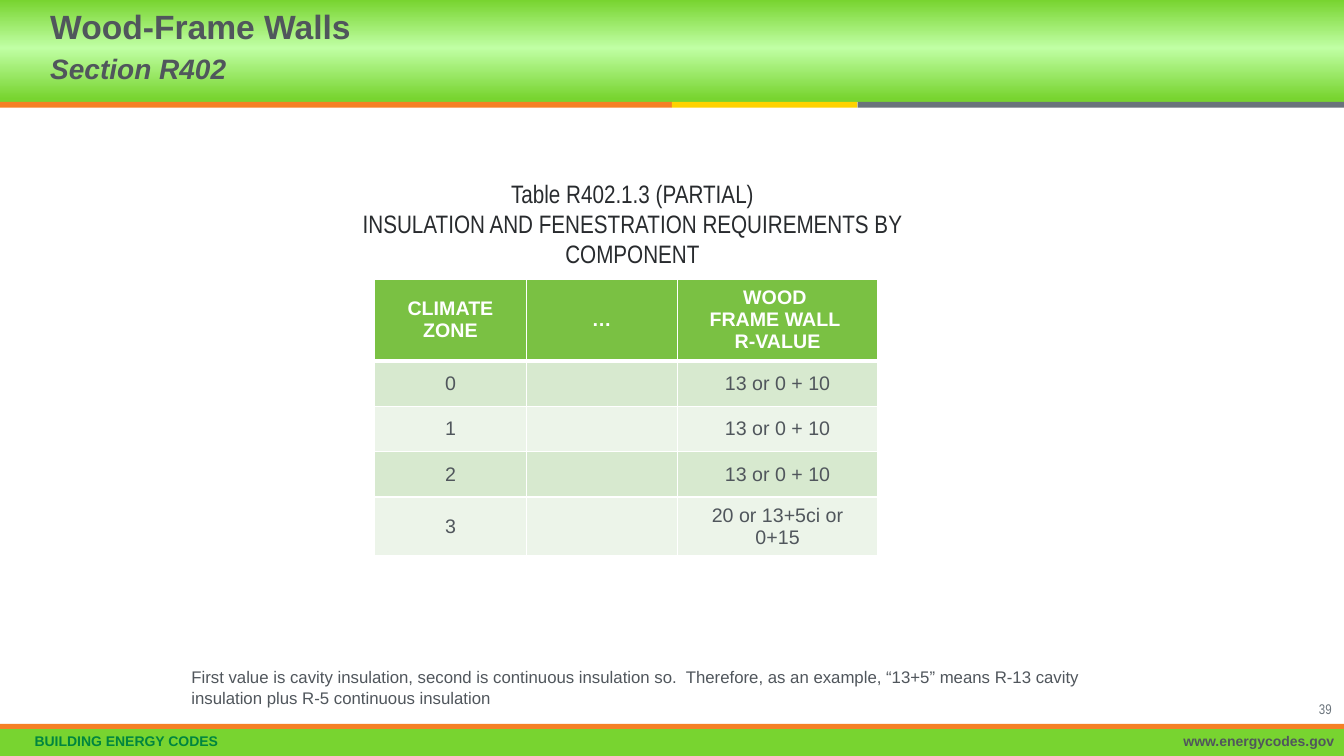
"""Builds the Wood-Frame Walls slide with its R-value table."""
from copy import deepcopy

from lxml import etree
from pptx import Presentation
from pptx.dml.color import RGBColor
from pptx.enum.shapes import MSO_SHAPE
from pptx.enum.text import MSO_ANCHOR, PP_ALIGN
from pptx.oxml.ns import qn
from pptx.util import Pt

RECT = MSO_SHAPE.RECTANGLE
LEFT, CENTER, RIGHT = PP_ALIGN.LEFT, PP_ALIGN.CENTER, PP_ALIGN.RIGHT
TOP, MIDDLE = MSO_ANCHOR.TOP, MSO_ANCHOR.MIDDLE

WHITE = RGBColor(0xFF, 0xFF, 0xFF)
LIME = RGBColor(0x78, 0xD4, 0x30)
PALE_LIME = RGBColor(0xC0, 0xFF, 0xA4)
ORANGE = RGBColor(0xF5, 0x80, 0x25)
YELLOW = RGBColor(0xFF, 0xD2, 0x00)
GRAY = RGBColor(0x6A, 0x73, 0x7B)
SLATE = RGBColor(0x50, 0x56, 0x5C)
INK = RGBColor(0x28, 0x2B, 0x2E)
GREEN = RGBColor(0x00, 0x85, 0x3F)
HEADER_GREEN = RGBColor(0x7A, 0xC1, 0x43)
BAND_DARK = RGBColor(0xD7, 0xE9, 0xCF)
BAND_LIGHT = RGBColor(0xEC, 0xF4, 0xE9)


def add_bar(x, y, w, h, color):
    """Add a borderless filled rectangle."""
    s = shapes.add_shape(RECT, Pt(x), Pt(y), Pt(w), Pt(h))
    s.shadow.inherit = False
    s.line.fill.background()
    s.fill.solid()
    s.fill.fore_color.rgb = color
    return s


def write(tf, text, align, color, formats, spacing=None):
    """Write one paragraph, giving its runs and line breaks the same format."""
    p = tf.paragraphs[0]
    p.text = text
    p.alignment = align
    if spacing:
        p.line_spacing = spacing
    for r in p.runs:
        r.font.color.rgb = color
        for name, value in formats.items():
            setattr(r.font, name, value)
    for br in p._p.findall(qn("a:br")):
        br.append(deepcopy(p.runs[0]._r.rPr))
    return p


prs = Presentation()
prs.slide_width, prs.slide_height = Pt(960), Pt(540)
shapes = prs.slides.add_slide(prs.slide_layouts[6]).shapes

banner = add_bar(-3, 0, 963, 72.7, LIME)
banner.fill.gradient()
banner.fill.gradient_angle = 270
gs_list = banner.fill._fill._gradFill.gsLst
gs_list.append(deepcopy(gs_list[0]))
for stop, (position, color) in zip(
        banner.fill.gradient_stops, [(0, LIME), (0.47, PALE_LIME), (0.97, LIME)]):
    stop.color.rgb = color
    stop.position = position

for x, y, w, h, color in [
    (0, 520.5, 960, 19.5, LIME),
    (0, 72.7, 480, 4.3, ORANGE),
    (480, 72.7, 132.5, 4.3, YELLOW),
    (612.5, 72.7, 347.5, 4.3, GRAY),
    (0, 517, 960, 3.6, ORANGE),
]:
    add_bar(x, y, w, h, color)

ARIAL_10 = {"name": "Arial", "size": Pt(10), "bold": True}
NARROW_10 = {"name": "Arial Narrow", "size": Pt(10)}
ARIAL_12 = {"name": "Arial", "size": Pt(12)}
NARROW_18 = {"name": "Arial Narrow", "size": Pt(18)}
TITLE = {"name": "Arial", "size": Pt(24), "bold": True}
SUBTITLE = {"size": Pt(20), "italic": True}

NOTE = ("First value is cavity insulation, second is continuous insulation so.  "
        "Therefore, as an example, “13+5” means R-13 cavity insulation "
        "plus R-5 continuous insulation")
CAPTION = ("Table R402.1.3 (PARTIAL)\v"
           "INSULATION AND FENESTRATION REQUIREMENTS BY COMPONENT")

for x, y, w, h, text, align, anchor, color, formats, spacing in [
    (17.6, 521.3, 400, 18.7, "BUILDING ENERGY CODES", LEFT, TOP, GREEN, ARIAL_10, 0.9),
    (575, 521.3, 385, 18.7, "www.energycodes.gov", RIGHT, TOP, SLATE, ARIAL_10, 0.9),
    (890.6, 496.8, 67.7, 13, "39", RIGHT, TOP, GRAY, NARROW_10, None),
    (28.8, -3.6, 427, 72.7, "Wood-Frame Walls\vSection R402", LEFT, MIDDLE, SLATE,
     TITLE, Pt(28)),
    (129.6, 473, 669.6, 36.7, NOTE, LEFT, TOP, SLATE, ARIAL_12, None),
    (249.8, 123.8, 404, 29.5, CAPTION, CENTER, TOP, INK, NARROW_18, None),
]:
    tf = shapes.add_textbox(Pt(x), Pt(y), Pt(w), Pt(h)).text_frame
    tf.word_wrap = True
    tf.vertical_anchor = anchor
    p = write(tf, text, align, color, formats, spacing)
    if formats is TITLE:
        for name, value in SUBTITLE.items():
            setattr(p.runs[1].font, name, value)

ROWS = [
    ("CLIMATE ZONE", "…", "WOOD \vFRAME WALL \vR-VALUE"),
    ("0", "", "13 or 0 + 10"),
    ("1", "", "13 or 0 + 10"),
    ("2", "", "13 or 0 + 10"),
    ("3", "", "20 or 13+5ci or 0+15"),
]
MARGINS = {"margin_left": Pt(8), "margin_right": Pt(8),
           "margin_top": Pt(4), "margin_bottom": Pt(4)}
table = shapes.add_table(5, 3, Pt(267.8), Pt(199.4), Pt(359.3), Pt(197.3)).table
for column, width in zip(table.columns, (108, 108, 143.3)):
    column.width = Pt(width)
for i, row in enumerate(ROWS):
    table.rows[i].height = Pt(32.4 if i else 58)
    for j, text in enumerate(row):
        cell = table.cell(i, j)
        tcPr = cell._tc.get_or_add_tcPr()
        for side in ("L", "R", "T", "B"):
            thick = (i, side) in ((0, "B"), (1, "T"))
            ln = etree.SubElement(tcPr, qn(f"a:ln{side}"), w=str(Pt(3 if thick else 1)))
            fill = etree.SubElement(ln, qn("a:solidFill"))
            etree.SubElement(fill, qn("a:srgbClr"), val=str(WHITE))
        cell.fill.solid()
        band = BAND_DARK if i % 2 else BAND_LIGHT
        cell.fill.fore_color.rgb = band if i else HEADER_GREEN
        cell.vertical_anchor = MIDDLE
        for name, value in MARGINS.items():
            setattr(cell, name, value)
        if text:
            write(cell.text_frame, text, CENTER, SLATE if i else WHITE,
                  {"name": "Arial", "size": Pt(14), "bold": i == 0})

prs.save("out.pptx")
